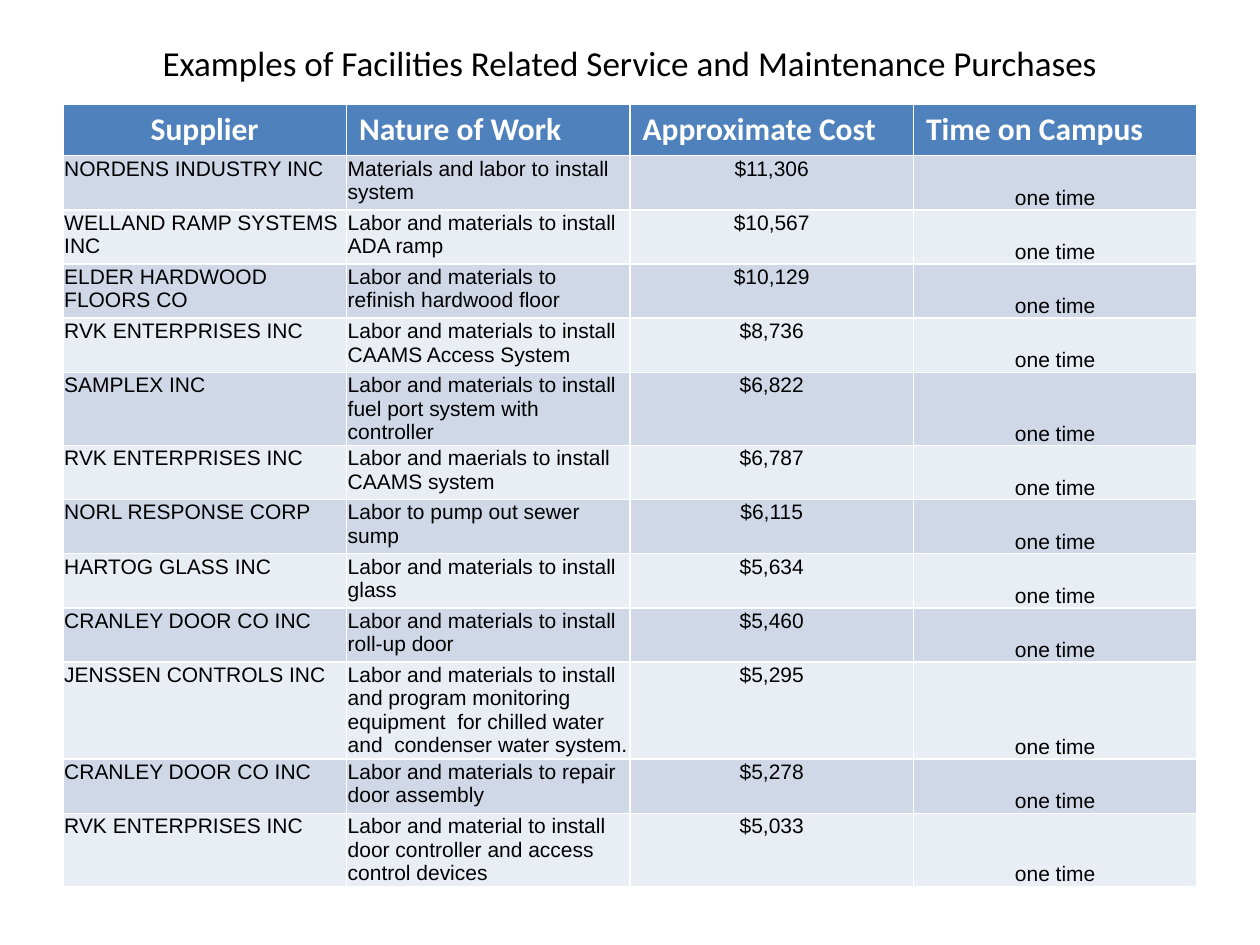
from pptx import Presentation
from pptx.dml.color import RGBColor
from pptx.enum.text import MSO_ANCHOR, PP_ALIGN
from pptx.util import Inches, Pt

HEADS = ["Supplier", "Nature of Work", "Approximate Cost", "Time on Campus"]
# supplier, work, cost, row height
JOBS = [
    ("NORDENS INDUSTRY INC", "Materials and labor to install system", "$11,306", 0.43),
    ("WELLAND RAMP SYSTEMS INC", "Labor and materials to install ADA ramp", "$10,567", 0.43),
    ("ELDER HARDWOOD FLOORS CO", "Labor and materials to refinish hardwood floor", "$10,129", 0.43),
    ("RVK ENTERPRISES INC", "Labor and materials to install CAAMS Access System", "$8,736", 0.43),
    ("SAMPLEX INC", "Labor and materials to install fuel port system with controller", "$6,822", 0.58),
    ("RVK ENTERPRISES INC", "Labor and maerials to install CAAMS system", "$6,787", 0.43),
    ("NORL RESPONSE CORP", "Labor to pump out sewer sump", "$6,115", 0.43),
    ("HARTOG GLASS INC", "Labor and materials to install glass", "$5,634", 0.43),
    ("CRANLEY DOOR CO INC", "Labor and materials to install roll-up door", "$5,460", 0.43),
    ("JENSSEN CONTROLS INC", "Labor and materials to install and program monitoring equipment  "
     "for chilled water and  condenser water system.", "$5,295", 0.77),
    ("CRANLEY DOOR CO INC", "Labor and materials to repair door assembly", "$5,278", 0.43),
    ("RVK ENTERPRISES INC", "Labor and material to install door controller and access control devices",
     "$5,033", 0.58),
]


def color(code):
    return RGBColor.from_string(code)


class Deck:
    blue, bands = "4F81BD", ("D0D8E8", "E9EDF4")
    white, black = "FFFFFF", "000000"

    def __init__(self):
        self.prs = Presentation()
        self.prs.slide_width, self.prs.slide_height = Inches(10), Inches(7.5)
        self.slide = self.prs.slides.add_slide(self.prs.slide_layouts[5])

    def label(self, frame, text, size, font, ink, bold=False, align=PP_ALIGN.LEFT):
        para = frame.paragraphs[0]
        para.text, para.alignment = text, align
        para.font.size, para.font.name, para.font.bold = Pt(size), font, bold
        para.font.color.rgb = color(ink)

    def title(self, text):
        box = self.slide.shapes.title
        box.left, box.top, box.width, box.height = map(Inches, (0.5, 0, 9, 1))
        box.text_frame.vertical_anchor = MSO_ANCHOR.MIDDLE
        self.label(box.text_frame, text, 20, "Calibri", self.black, align=PP_ALIGN.CENTER)

    def head(self, cell, text, align):
        cell.fill.solid()
        cell.fill.fore_color.rgb = color(self.blue)
        self.label(cell.text_frame, text, 18, "Calibri", self.white, True, align)

    def body(self, cell, text, band, align, anchor):
        cell.margin_left = cell.margin_right = cell.margin_top = Inches(0.01)
        cell.margin_bottom = 0
        cell.vertical_anchor = anchor
        cell.fill.solid()
        cell.fill.fore_color.rgb = color(band)
        self.label(cell.text_frame, text, 12, "Arial", self.black, align=align)

    def table(self, heads, jobs):
        tall = [0.4] + [job[-1] for job in jobs]
        grid = self.slide.shapes.add_table(
            len(tall), len(heads), Inches(0.5), Inches(0.83), Inches(9), Inches(sum(tall))).table
        for row, high in zip(grid.rows, tall):
            row.height = Inches(high)
        for col, text in enumerate(heads):
            self.head(grid.cell(0, col), text, PP_ALIGN.LEFT if col else PP_ALIGN.CENTER)
        for row, (name, work, cost, _) in enumerate(jobs):
            for col, text in enumerate((name, work, cost, "one time")):
                self.body(grid.cell(row + 1, col), text, self.bands[row % 2],
                          PP_ALIGN.CENTER if col > 1 else PP_ALIGN.LEFT,
                          MSO_ANCHOR.BOTTOM if col == 3 else MSO_ANCHOR.TOP)


def main():
    deck = Deck()
    deck.title("Examples of Facilities Related Service and Maintenance Purchases")
    deck.table(HEADS, JOBS)
    deck.prs.save("out.pptx")


if __name__ == "__main__":
    main()
